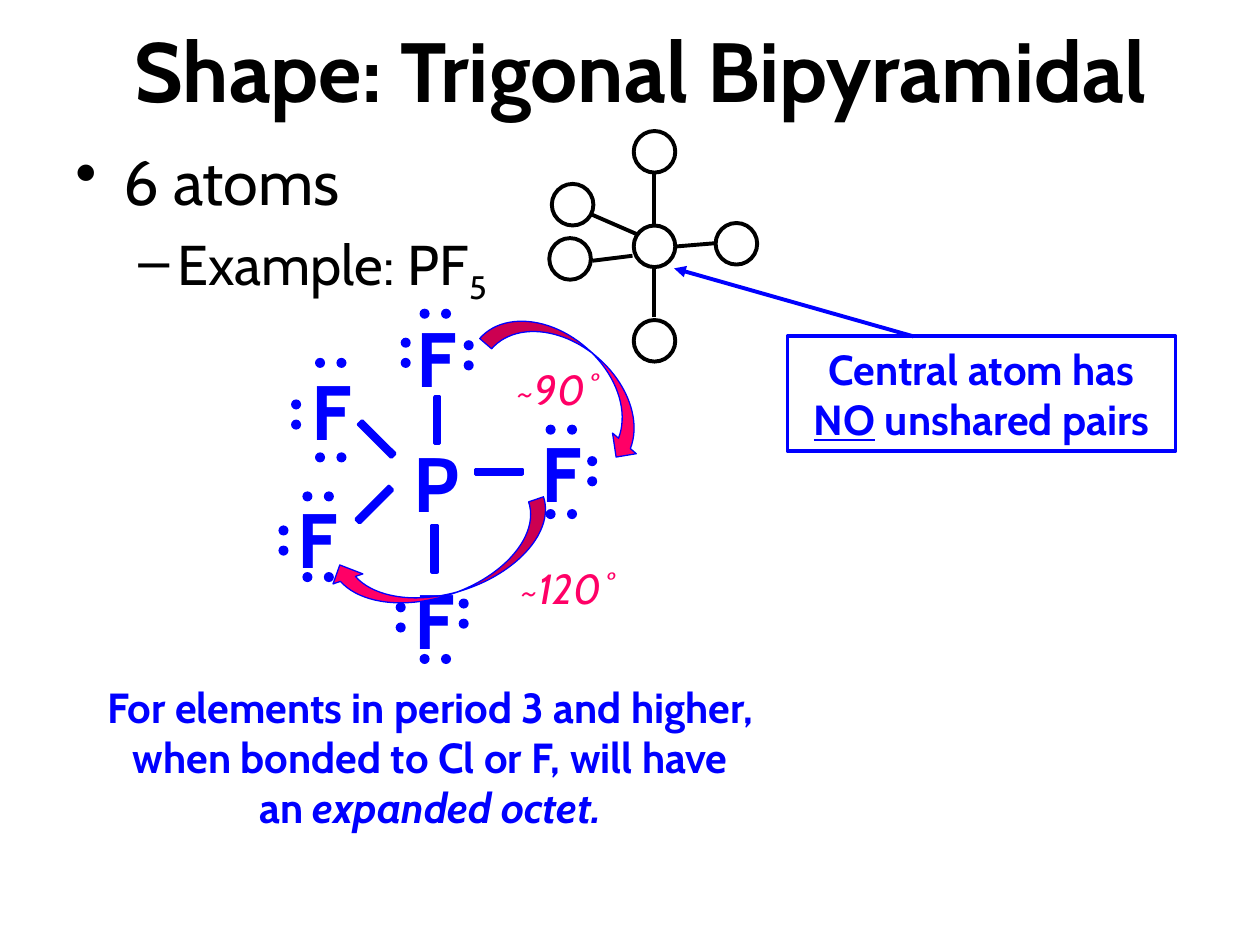
from dataclasses import dataclass

from pptx import Presentation
from pptx import util as u
from pptx.dml.color import RGBColor
from pptx.enum import shapes, text
from pptx.oxml.ns import qn
from lxml import etree

COLORS = {"black": "000000", "white": "FFFFFF", "blue": "0000FF", "pink": "FF0066"}
FONT = "Cabin"
KIND = shapes.MSO_SHAPE


@dataclass
class Area:
    left: float
    top: float
    width: float
    height: float

    def lengths(self) -> list:
        """Return the four lengths of the area."""
        return [u.Inches(n) for n in (self.left, self.top, self.width, self.height)]


@dataclass
class Span:
    words: str
    bold: bool = True
    italic: bool = False
    underline: bool = False
    baseline: int = 0


@dataclass
class Label:
    area: Area
    spans: list
    size: float = 24
    color: str = "blue"


@dataclass
class Bullet:
    mark: str
    spans: list
    size: float
    margin: float
    indent: float
    before: float


@dataclass
class Bond:
    start: tuple
    end: tuple
    color: str = "black"


@dataclass
class Pair:
    left: float
    top: float
    upright: bool = False


@dataclass
class Figure:
    area: Area
    turn: float = 0


def rgb(name: str) -> RGBColor:
    """Look up a named colour."""
    return RGBColor.from_string(COLORS[name])


def write(para, spans: list, size: float, color: str) -> None:
    """Fill a paragraph with formatted spans."""
    for span in spans:
        run = para.add_run()
        run.text = span.words
        font = run.font
        font.name, font.size = FONT, u.Pt(size)
        font.bold, font.italic, font.underline = span.bold, span.italic, span.underline
        font.color.rgb = rgb(color)
        if span.baseline:
            font._element.set("baseline", str(span.baseline * 1000))


def draw_label(page, label: Label, outlined: bool = False) -> None:
    """Draw centred text, with a frame if outlined."""
    box = page.shapes.add_textbox(*label.area.lengths())
    if outlined:
        box.line.color.rgb = rgb(label.color)
        box.line.width = u.Pt(2.25)
    frame = box.text_frame
    frame.word_wrap = True
    frame.vertical_anchor = text.MSO_ANCHOR.MIDDLE
    para = frame.paragraphs[0]
    para.alignment = text.PP_ALIGN.CENTER
    write(para, label.spans, label.size, label.color)


def draw_bullets(page, area: Area, bullets: list) -> None:
    """Draw a bulleted list."""
    frame = page.shapes.add_textbox(*area.lengths()).text_frame
    frame.word_wrap = True
    for index, bullet in enumerate(bullets):
        para = frame.add_paragraph() if index else frame.paragraphs[0]
        para.level = index
        para.space_before = u.Pt(bullet.before)
        write(para, bullet.spans, bullet.size, "black")
        props = para._p.get_or_add_pPr()
        props.set("marL", str(u.Inches(bullet.margin)))
        props.set("indent", str(u.Inches(bullet.indent)))
        etree.SubElement(props, qn("a:buChar")).set("char", bullet.mark)


def draw_figure(page, kind, figure: Figure, fill: str, line: str = "", width: float = 0) -> None:
    """Draw a filled preset shape."""
    shape = page.shapes.add_shape(kind, *figure.area.lengths())
    shape.shadow.inherit = False
    shape.rotation = figure.turn
    shape.fill.solid()
    shape.fill.fore_color.rgb = rgb(fill)
    if line:
        shape.line.color.rgb = rgb(line)
        shape.line.width = u.Pt(width)
    else:
        shape.line.fill.background()


def draw_bond(page, bond: Bond, arrow: bool = False) -> None:
    """Draw a straight line, with a head if it is an arrow."""
    ends = [u.Inches(n) for n in (*bond.start, *bond.end)]
    line = page.shapes.add_connector(shapes.MSO_CONNECTOR.STRAIGHT, *ends)
    line.line.color.rgb = rgb(bond.color)
    line.line.width = u.Pt(2.25)
    if arrow:
        etree.SubElement(line.line._get_or_add_ln(), qn("a:tailEnd")).set("type", "triangle")
    etree.SubElement(line._element.spPr, qn("a:effectLst"))


def draw_pair(page, pair: Pair) -> None:
    """Draw the two dots of an electron pair."""
    step_x, step_y = (0, 0.16) if pair.upright else (0.17, 0)
    for n in range(2):
        area = Area(pair.left + n * step_x, pair.top + n * step_y, 0.08, 0.08)
        draw_figure(page, KIND.OVAL, Figure(area), "blue")


TITLE = Label(Area(0.5, -0.08, 9.17, 1.25), [Span("Shape: Trigonal Bipyramidal")], 48, "black")
BULLETS = [
    Bullet("•", [Span("6 atoms", False)], 36, 0.38, -0.38, 0),
    Bullet("–", [Span("Example: PF", False), Span("5", False, baseline=-25)], 32, 0.81, -0.31, 6.4),
]
CALLOUT = Label(Area(6.25, 2.67, 3.08, 0.91),
                [Span("Central atom has "), Span("NO", underline=True), Span(" unshared pairs")])
NOTE = Label(Area(0.75, 5.35, 5.33, 1.31), [
    Span("For elements in period 3 and higher, when bonded to Cl or F, will have an "),
    Span("expanded octet.", italic=True)])
POINTER = Bond((7.25, 2.67), (5.35, 2.13), "blue")
MODEL_BONDS = [
    Bond((4.69, 1.7), (5.08, 1.87)), Bond((5.32, 1.96), (5.68, 1.93)),
    Bond((5.19, 2.52), (5.19, 2.12)), Bond((5.19, 1.79), (5.19, 1.34)),
    Bond((4.7, 2.07), (5.02, 2.03)),
]
MODEL_ATOMS = [(4.38, 1.46), (5.68, 1.77), (5.03, 2.54), (5.03, 1.79), (4.36, 1.89), (5.03, 1.04)]
SYMBOLS = [("P", 3, 3.4), ("F", 4, 3.32), ("F", 2.06, 3.85),
           ("F", 2.99, 4.49), ("F", 3.01, 2.41), ("F", 2.17, 2.83)]
BARS = [(2.74, 3.4, 45), (3.71, 3.66, 0), (2.72, 3.92, 135), (3.2, 4.27, 90), (3.22, 3.25, 270)]
PAIRS = [
    Pair(3.33, 2.45), Pair(3.18, 2.68, True), Pair(3.68, 2.7, True),
    Pair(4.33, 3.37), Pair(4.33, 4.04), Pair(4.66, 3.62, True),
    Pair(3.33, 5.19), Pair(3.14, 4.78, True), Pair(3.64, 4.75, True),
    Pair(2.5, 2.84), Pair(2.5, 3.59), Pair(2.31, 3.17, True),
    Pair(2.4, 3.9), Pair(2.4, 4.54), Pair(2.21, 4.17, True),
]
ANGLES = [
    (Figure(Area(3.78, 2.76, 1.56, 0.5), 41), "~90˚", Area(3.75, 2.83, 1.33, 0.51)),
    (Figure(Area(2.61, 4.22, 1.83, 0.5), 161.5), "~120˚", Area(3.83, 4.41, 1.33, 0.51)),
]


def main() -> None:
    """Build the slide and save it."""
    deck = Presentation()
    deck.slide_width, deck.slide_height = u.Inches(10), u.Inches(7.5)
    page = deck.slides.add_slide(deck.slide_layouts[6])
    draw_label(page, TITLE)
    draw_bullets(page, Area(0.5, 1.08, 9, 4.95), BULLETS)
    draw_label(page, CALLOUT, outlined=True)
    draw_bond(page, POINTER, arrow=True)
    for bond in MODEL_BONDS:
        draw_bond(page, bond)
    for left, top in MODEL_ATOMS:
        draw_figure(page, KIND.OVAL, Figure(Area(left, top, 0.33, 0.33)), "white", "black", 2.25)
    draw_label(page, NOTE)
    for left, top, turn in BARS:
        draw_figure(page, KIND.MATH_MINUS, Figure(Area(left, top, 0.5, 0.17), turn), "blue", "blue", 2)
    for symbol, left, top in SYMBOLS:
        draw_label(page, Label(Area(left, top, 0.92, 0.84), [Span(symbol)], 44))
    for pair in PAIRS:
        draw_pair(page, pair)
    for arrow, words, area in ANGLES:
        draw_figure(page, KIND.CURVED_DOWN_ARROW, arrow, "pink", "blue", 0.75)
        draw_label(page, Label(area, [Span(words, False, True)], color="pink"))
    deck.save("out.pptx")


if __name__ == "__main__":
    main()
